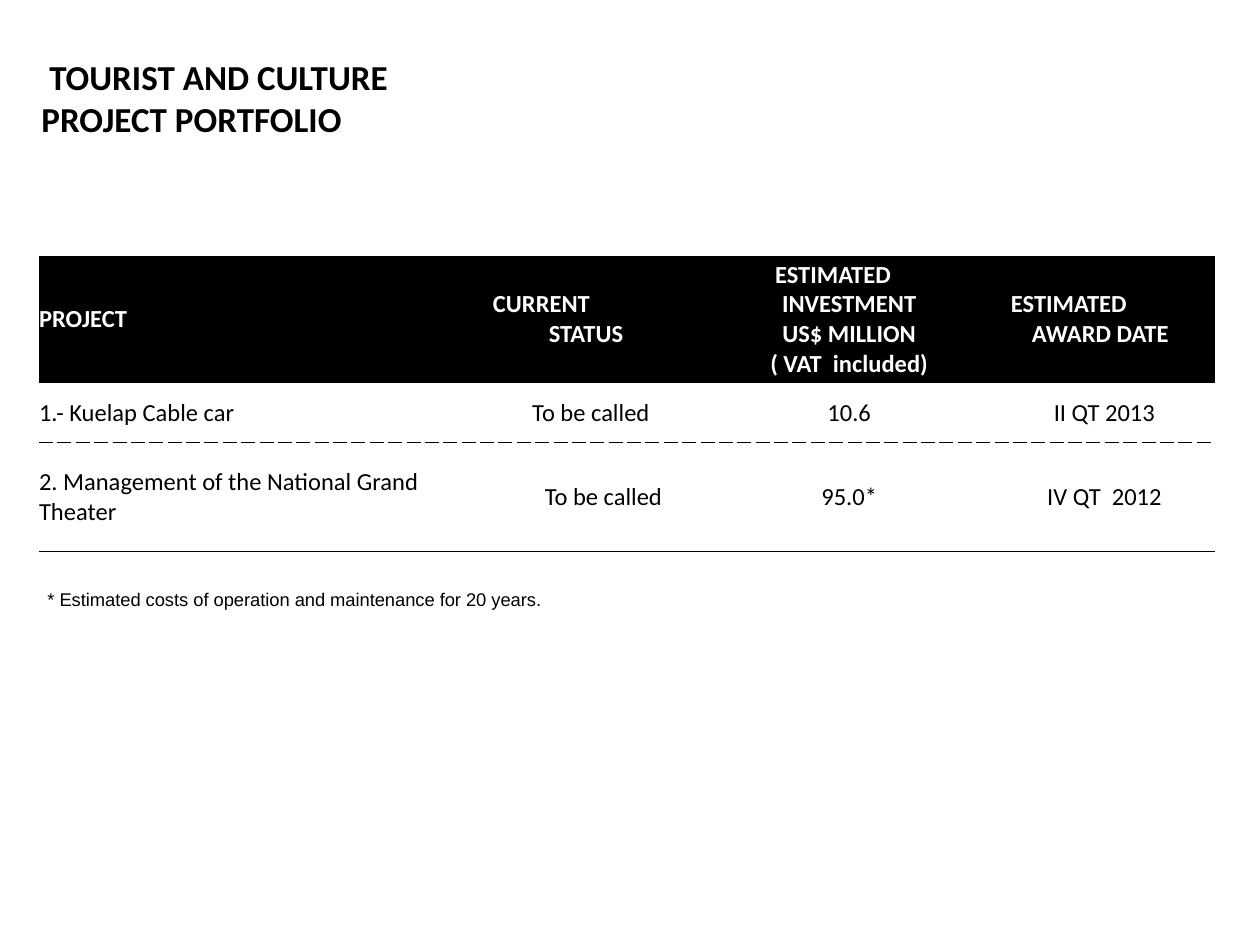
from dataclasses import dataclass
from typing import Optional

from lxml.etree import SubElement
from pptx import Presentation
from pptx.dml.color import RGBColor
from pptx.enum.text import MSO_ANCHOR, PP_ALIGN
from pptx.oxml import parse_xml
from pptx.oxml.ns import qn
from pptx.util import Pt


@dataclass(frozen=True)
class Theme:
    ink: str = "000000"
    paper: str = "FFFFFF"
    font: str = "Calibri"
    note_font: str = "Arial"
    title: float = 20
    body: float = 14
    note: float = 10.5
    rule: float = 0.5


@dataclass(frozen=True)
class Line:
    """A paragraph; first and rest are the left edges of its lines."""
    text: str
    first: float = 0
    rest: float = 0
    align: PP_ALIGN = PP_ALIGN.CENTER


@dataclass(frozen=True)
class Row:
    height: float
    cells: tuple[tuple[Line, ...], ...]
    header: bool = False
    top: Optional[str] = None
    bottom: Optional[str] = None


T = Theme()
LEFT = PP_ALIGN.LEFT
NO_STYLE = "{2D5ABB26-0587-4C30-8999-92F81FD0307C}"
COLUMNS = (239, 147, 154, 132)
INSET = 5.76

ROWS = (
    Row(72.7, (
        (Line("PROJECT", align=LEFT),),
        (Line("CURRENT\vSTATUS", 20.4, 52.3, LEFT),),
        (Line("ESTIMATED\vINVESTMENT", 34.6, 38.6, LEFT),
         Line("US$ MILLION"), Line("( VAT  included)")),
        (Line("ESTIMATED\vAWARD DATE", 15.4, 27.4, LEFT),),
    ), header=True),
    Row(33.8, (
        (Line("1.- Kuelap Cable car", align=LEFT),),
        (Line("To be called", INSET, INSET),),
        (Line("10.6"),),
        (Line("II QT 2013", INSET, INSET),),
    ), bottom="sysDash"),
    Row(62.6, (
        (Line("2. Management of the National Grand Theater", align=LEFT),),
        (Line("To be called", 50, 50, LEFT),),
        (Line("95.0*"),),
        (Line("IV QT  2012", INSET, INSET),),
    ), top="sysDash", bottom="solid"),
)


def write(p, text: str, *, size: float = T.body, font: str = T.font,
          color: str = T.ink, bold: bool = False, align: PP_ALIGN = LEFT,
          first: float = 0, rest: float = 0) -> None:
    p.text = text
    p.alignment = align
    pPr = p._p.get_or_add_pPr()
    pPr.set("marL", str(Pt(rest)))
    pPr.set("indent", str(Pt(first - rest)))
    for r in p.runs:
        r.font.size, r.font.name, r.font.bold = Pt(size), font, bold
        r.font.color.rgb = RGBColor.from_string(color)


def add_text(s, x: float, y: float, w: float, h: float, text: str, **fmt) -> None:
    tf = s.shapes.add_textbox(Pt(x), Pt(y), Pt(w), Pt(h)).text_frame
    tf.word_wrap = True
    write(tf.paragraphs[0], text, **fmt)


def add_border(cell, side: str, dash: str, index: int) -> None:
    ln = parse_xml(
        '<a:%s xmlns:a="http://schemas.openxmlformats.org/drawingml/2006/main" w="%d"/>'
        % (side, Pt(T.rule)))
    fill = SubElement(ln, qn("a:solidFill"))
    SubElement(fill, qn("a:srgbClr")).set("val", T.ink)
    SubElement(ln, qn("a:prstDash")).set("val", dash)
    cell._tc.get_or_add_tcPr().insert(index, ln)


def fill_cell(cell, lines: tuple[Line, ...], row: Row) -> None:
    cell.margin_left = cell.margin_right = cell.margin_top = cell.margin_bottom = 0
    cell.vertical_anchor = MSO_ANCHOR.MIDDLE
    if row.header:
        cell.fill.solid()
        cell.fill.fore_color.rgb = RGBColor.from_string(T.ink)
    else:
        cell.fill.background()
    borders = [(n, d) for n, d in (("lnT", row.top), ("lnB", row.bottom)) if d]
    for i, (side, dash) in enumerate(borders):
        add_border(cell, side, dash, i)
    tf = cell.text_frame
    for i, line in enumerate(lines):
        p = tf.add_paragraph() if i else tf.paragraphs[0]
        write(p, line.text, color=T.paper if row.header else T.ink,
              bold=row.header, align=line.align, first=line.first, rest=line.rest)


def add_projects(s, x: float, y: float) -> None:
    height = sum(row.height for row in ROWS)
    table = s.shapes.add_table(len(ROWS), len(COLUMNS), Pt(x), Pt(y),
                               Pt(sum(COLUMNS)), Pt(height)).table
    table.first_row = table.horz_banding = False
    table._tbl.tblPr.find(qn("a:tableStyleId")).text = NO_STYLE
    for column, width in zip(table.columns, COLUMNS):
        column.width = Pt(width)
    for r, row in enumerate(ROWS):
        table.rows[r].height = Pt(row.height)
        for c, lines in enumerate(row.cells):
            fill_cell(table.cell(r, c), lines, row)


def main() -> None:
    prs = Presentation()
    prs.slide_width, prs.slide_height = Pt(720), Pt(540)
    s = prs.slides.add_slide(prs.slide_layouts[6])

    # Project table
    add_projects(s, 22.3, 146.2)

    # Title
    add_text(s, 16.6, 28, 247, 55.4, "TOURIST AND CULTURE PROJECT PORTFOLIO",
             size=T.title, bold=True, first=4.5)

    # Footnote
    add_text(s, 20, 332.6, 306, 20,
             "* Estimated costs of operation and maintenance for 20 years.",
             size=T.note, font=T.note_font)

    prs.save("out.pptx")


if __name__ == "__main__":
    main()
